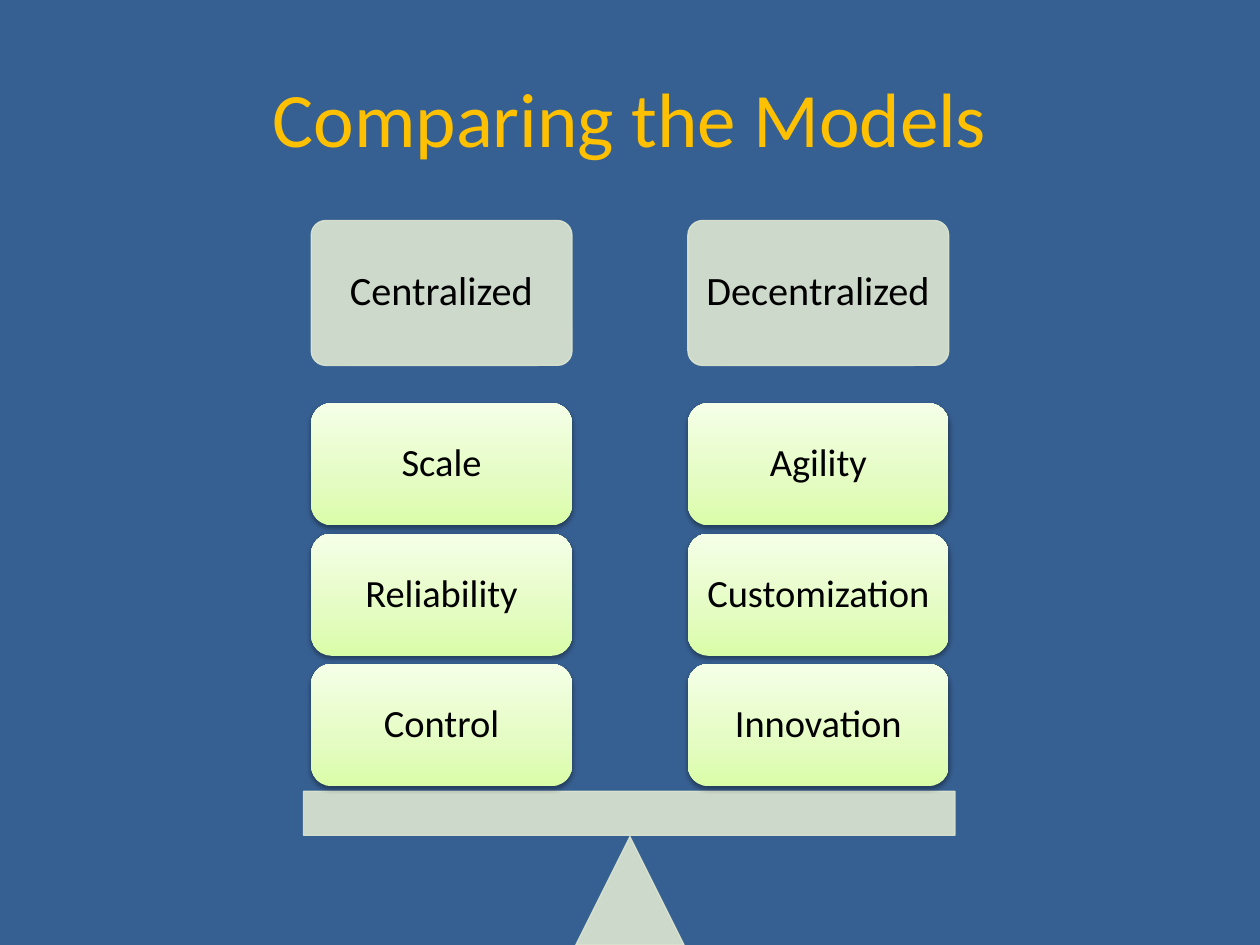
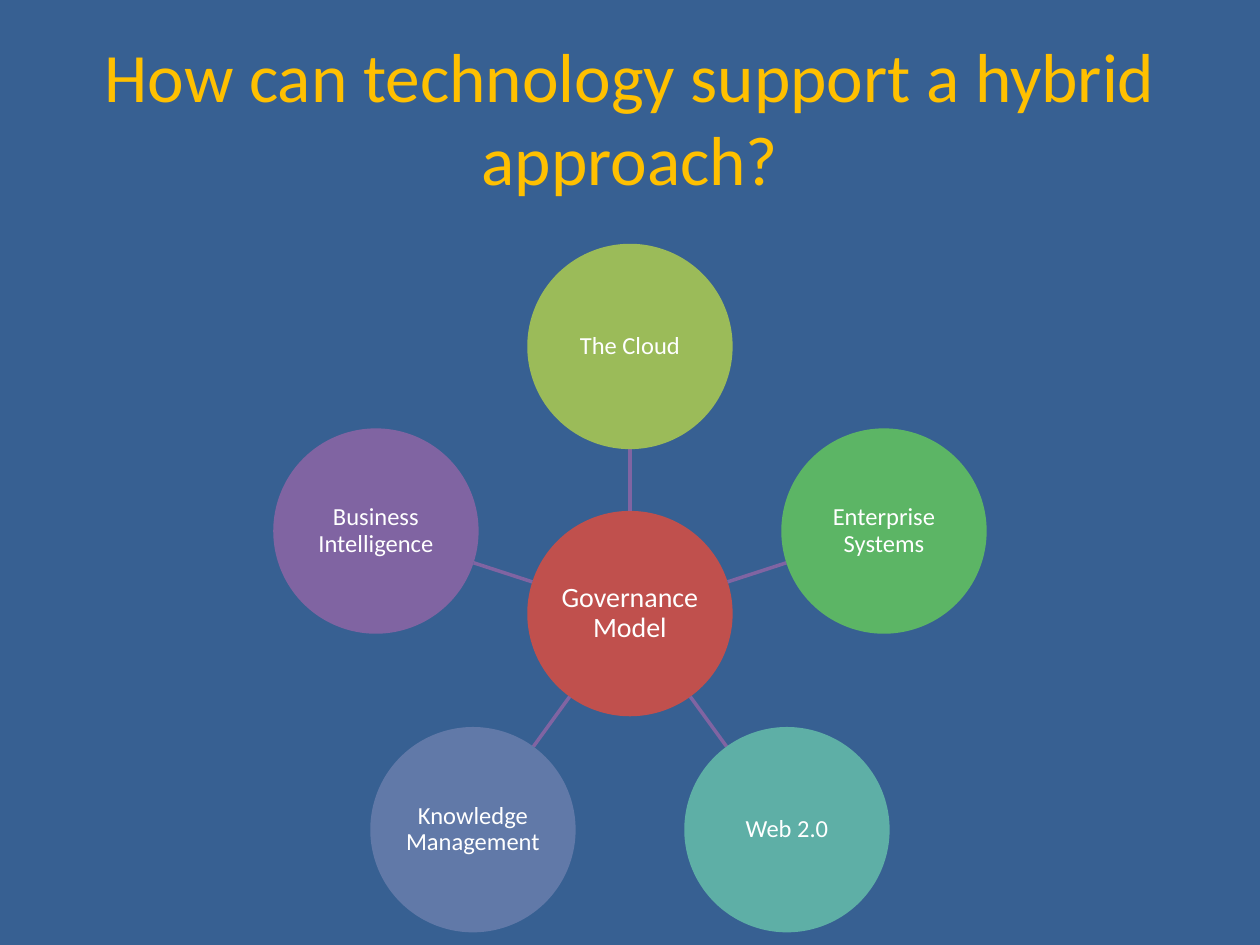
from copy import deepcopy
from dataclasses import dataclass
from math import cos, radians, sin

from pptx import Presentation
from pptx.dml.color import RGBColor
from pptx.enum.shapes import MSO_CONNECTOR, MSO_SHAPE
from pptx.enum.text import MSO_ANCHOR, MSO_AUTO_SIZE, PP_ALIGN
from pptx.oxml import parse_xml
from pptx.oxml.ns import nsdecls, qn
from pptx.oxml.xmlchemy import OxmlElement
from pptx.shapes.autoshape import Shape
from pptx.slide import Slide
from pptx.util import Inches, Pt

ROUNDED, RECT = MSO_SHAPE.ROUNDED_RECTANGLE, MSO_SHAPE.RECTANGLE
TRIANGLE, OVAL = MSO_SHAPE.ISOSCELES_TRIANGLE, MSO_SHAPE.OVAL
STRAIGHT = MSO_CONNECTOR.STRAIGHT
CENTER, MIDDLE = PP_ALIGN.CENTER, MSO_ANCHOR.MIDDLE

FONT = "Calibri"
COLORS = {
    "background": "376092", "title": "FFC000",
    "pale": "DEE7D1", "dark_text": "000000", "light_text": "FFFFFF",
    "hub": "C0504D", "link": "8064A2",
    "cloud": "9BBB59", "enterprise": "5CB565", "web": "5EAFA6",
    "knowledge": "6179A8", "intelligence": "8064A2",
}
WEIGHT_GRADIENT = [(0, "DAFDA7"), (0.35, "E4FCC2"), (1, "F5FFE7")]


@dataclass
class Box:
    left: float
    top: float
    width: float
    height: float


@dataclass
class Pan:
    """One side of the scale: a heading above its stacked weights."""
    left: float
    heading: str
    weights: list[str]


@dataclass
class Satellite:
    label: str
    color: str


def rgb(name: str) -> RGBColor:
    return RGBColor.from_string(COLORS[name])


def add_titled_slide(prs, text: str, size: float) -> Slide:
    slide = prs.slides.add_slide(prs.slide_layouts[5])
    title = slide.shapes.title
    title.left, title.top = Inches(0.5), Inches(0.3)
    title.width, title.height = Inches(9), Inches(1.25)
    frame = title.text_frame
    frame.text = text
    frame.auto_size = MSO_AUTO_SIZE.NONE
    frame.vertical_anchor = MIDDLE
    paragraph = frame.paragraphs[0]
    paragraph.alignment = CENTER
    paragraph.font.name, paragraph.font.size = FONT, Pt(size)
    paragraph.font.color.rgb = rgb("title")
    return slide


def add_shape(slide: Slide, kind: MSO_SHAPE, box: Box) -> Shape:
    shape = slide.shapes.add_shape(
        kind, Inches(box.left), Inches(box.top), Inches(box.width), Inches(box.height))
    shape.shadow.inherit = False
    shape.line.fill.background()
    return shape


def write_label(shape: Shape, text: str, size: float, color: str, inset: float) -> None:
    frame = shape.text_frame
    frame.word_wrap = True
    frame.vertical_anchor = MIDDLE
    frame.margin_left = frame.margin_right = Inches(inset)
    frame.margin_top = frame.margin_bottom = Inches(inset)
    frame.text = text
    paragraph = frame.paragraphs[0]
    paragraph.alignment = CENTER
    paragraph.line_spacing = 0.9
    paragraph.font.name, paragraph.font.size = FONT, Pt(size)
    paragraph.font.color.rgb = rgb(color)


def paint_pale(shape: Shape) -> None:
    """Fill and outline in the pale colour at 90% opacity."""
    shape.line.width = Pt(0.75)
    for fill in (shape.fill, shape.line.fill):
        fill.solid()
        fill.fore_color.rgb = rgb("pale")
    for color in shape._element.spPr.iter(qn("a:srgbClr")):
        alpha = OxmlElement("a:alpha")
        alpha.set("val", "90000")
        color.append(alpha)


def paint_weight(shape: Shape) -> None:
    """Three-stop upward gradient with a soft shadow below."""
    properties = shape._element.spPr
    shape.fill.gradient()
    shape.fill.gradient_angle = 90
    stop_list = properties.find(".//" + qn("a:gsLst"))
    stop_list.append(deepcopy(stop_list[-1]))
    for stop, (position, color) in zip(shape.fill.gradient_stops, WEIGHT_GRADIENT):
        stop.position = position
        stop.color.rgb = RGBColor.from_string(color)
    properties.find(qn("a:effectLst")).append(parse_xml(
        f'<a:outerShdw {nsdecls("a")} blurRad="{Pt(3.1)}" dist="{Pt(1.6)}" '
        'dir="5400000" rotWithShape="0"><a:srgbClr val="000000">'
        '<a:alpha val="38000"/></a:srgbClr></a:outerShdw>'))


def add_link(slide: Slide, start: tuple[float, float], end: tuple[float, float]) -> None:
    link = slide.shapes.add_connector(STRAIGHT, *map(Inches, start + end))
    link.line.color.rgb = rgb("link")
    link.line.width = Pt(2)
    link._element.spPr.append(OxmlElement("a:effectLst"))


def build_scale_slide(prs) -> None:
    slide = add_titled_slide(prs, "Comparing the Models", 44)
    pans = [
        Pan(2.47, "Centralized", ["Scale", "Reliability", "Control"]),
        Pan(5.46, "Decentralized", ["Agility", "Customization", "Innovation"]),
    ]
    pan_width, first_weight, weight_step = 2.07, 3.2, 1.035

    # Fulcrum and beam
    for kind, box in ((TRIANGLE, Box(4.57, 6.64, 0.86, 0.86)),
                      (RECT, Box(2.41, 6.28, 5.17, 0.35))):
        paint_pale(add_shape(slide, kind, box))

    # Headings and the weights under them
    for pan in pans:
        heading = add_shape(slide, ROUNDED, Box(pan.left, 1.75, pan_width, 1.15))
        heading.adjustments[0] = 0.1
        paint_pale(heading)
        write_label(heading, pan.heading, 23, "dark_text", 0.1)
        for row, text in enumerate(pan.weights):
            top = first_weight + row * weight_step
            weight = add_shape(slide, ROUNDED, Box(pan.left, top, pan_width, 0.97))
            paint_weight(weight)
            write_label(weight, text, 22, "dark_text", 0.09)


def build_hub_slide(prs) -> None:
    slide = add_titled_slide(prs, "How can technology support a hybrid approach?", 39.6)
    center_x, center_y, diameter, orbit = 5, 4.87, 1.63, 2.12
    satellites = [  # clockwise from the top
        Satellite("The Cloud", "cloud"),
        Satellite("Enterprise Systems", "enterprise"),
        Satellite("Web 2.0", "web"),
        Satellite("Knowledge Management", "knowledge"),
        Satellite("Business Intelligence", "intelligence"),
    ]

    def point(angle: float, distance: float) -> tuple[float, float]:
        return center_x + distance * cos(angle), center_y + distance * sin(angle)

    def add_circle(x: float, y: float, label: str, color: str, size: float) -> None:
        circle = add_shape(
            slide, OVAL, Box(x - diameter / 2, y - diameter / 2, diameter, diameter))
        circle.fill.solid()
        circle.fill.fore_color.rgb = rgb(color)
        write_label(circle, label, size, "light_text", 0.01)

    # Hub, then each satellite with its link from rim to rim
    add_circle(center_x, center_y, "Governance Model", "hub", 16)
    for index, satellite in enumerate(satellites):
        angle = radians(index * 360 / len(satellites) - 90)
        add_link(slide, point(angle, diameter / 2), point(angle, orbit - diameter / 2))
        add_circle(*point(angle, orbit), satellite.label, satellite.color, 14)


def main() -> None:
    prs = Presentation()
    prs.slide_width, prs.slide_height = Inches(10), Inches(7.5)
    backdrop = prs.slide_master.background.fill
    backdrop.solid()
    backdrop.fore_color.rgb = rgb("background")
    build_scale_slide(prs)
    build_hub_slide(prs)
    prs.save("out.pptx")


if __name__ == "__main__":
    main()
